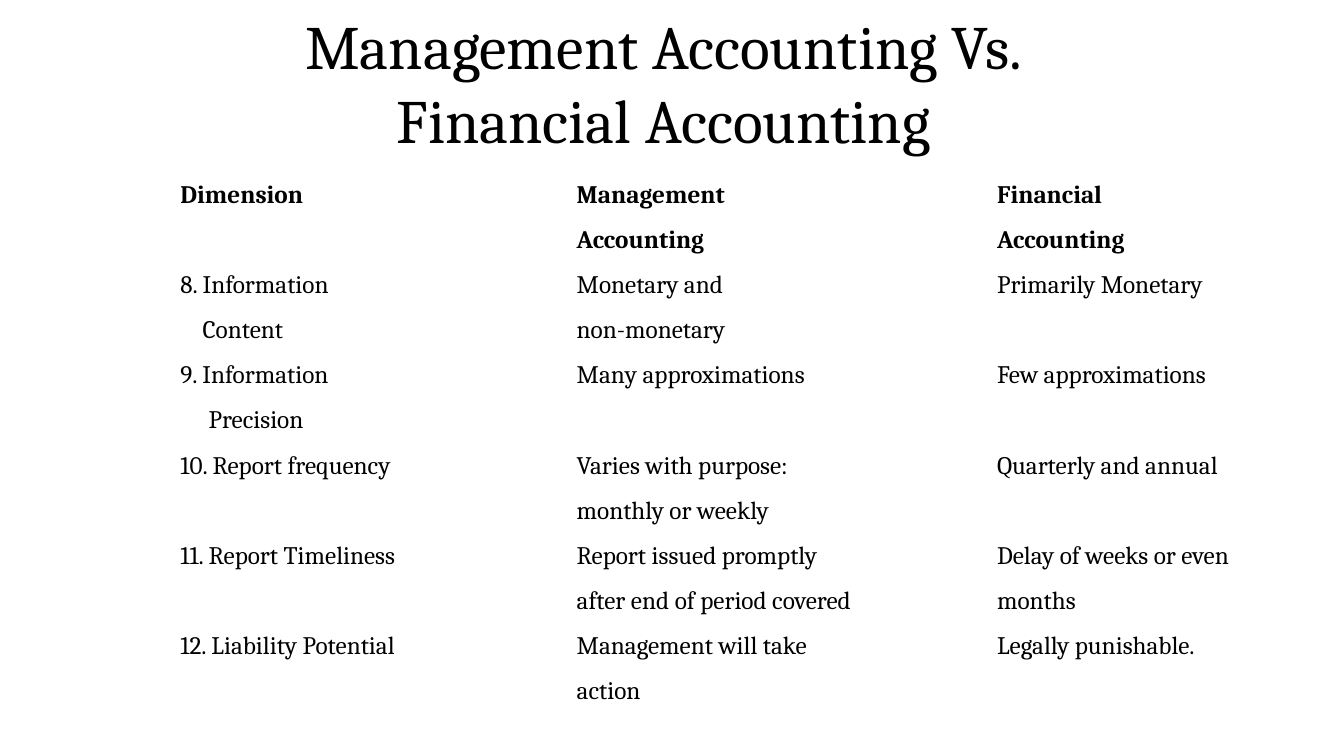
from dataclasses import dataclass

from pptx import Presentation
from pptx.dml.color import RGBColor
from pptx.enum.text import MSO_ANCHOR, MSO_AUTO_SIZE, PP_ALIGN
from pptx.util import Inches, Pt


@dataclass(frozen=True)
class Theme:
    font: str = "Cambria"
    text: RGBColor = RGBColor(0x00, 0x00, 0x00)
    title_size: Pt = Pt(44)
    title_line: Pt = Pt(52.8)
    table_size: Pt = Pt(18)


theme = Theme()


def format_font(font, size, bold=False):
    for name, value in {"name": theme.font, "size": size, "bold": bold}.items():
        setattr(font, name, value)
    font.color.rgb = theme.text


presentation = Presentation()
presentation.slide_width = Inches(13.33)
presentation.slide_height = Inches(7.5)
slide = presentation.slides.add_slide(presentation.slide_layouts[5])

# Title
title = slide.shapes.title
title_box = {"left": 2.08, "top": 0.08, "width": 9.01, "height": 1.44}
for name, value in title_box.items():
    setattr(title, name, Inches(value))
title_frame = title.text_frame
title_format = {
    "margin_left": 0, "margin_top": 0, "margin_right": 0, "margin_bottom": 0,
    "word_wrap": True, "auto_size": MSO_AUTO_SIZE.NONE,
    "vertical_anchor": MSO_ANCHOR.TOP,
}
for name, value in title_format.items():
    setattr(title_frame, name, value)
title_frame.text = "Management Accounting Vs.\nFinancial Accounting"
for paragraph in title_frame.paragraphs:
    paragraph.alignment = PP_ALIGN.CENTER
    paragraph.line_spacing = theme.title_line
    format_font(paragraph.runs[0].font, theme.title_size)

# Comparison rows: the first two are the heading
rows = [
    ("Dimension", "Management", "Financial"),
    ("", "Accounting", "Accounting"),
    ("8. Information", "Monetary and", "Primarily Monetary"),
    ("Content", "non-monetary", ""),
    ("9. Information", "Many approximations", "Few approximations"),
    ("Precision", "", ""),
    ("10. Report frequency", "Varies with purpose:", "Quarterly and annual"),
    ("", "monthly or weekly", ""),
    ("11. Report Timeliness", "Report issued promptly", "Delay of weeks or even"),
    ("", "after end of period covered", "months"),
    ("12. Liability Potential", "Management will take", "Legally punishable."),
    ("", "action", ""),
]
heading_rows = 2
column_widths = [3.57, 4.47, 3.38]
column_indents = [0.04, 0.4, 0.1]
continuation_indents = {"Content": 0.26, "Precision": 0.32}

# Table
table = slide.shapes.add_table(
    len(rows), len(column_widths),
    Inches(1.75), Inches(1.79), Inches(sum(column_widths)), Inches(5.38),
).table
table.first_row = False
table.horz_banding = False
for column, width in zip(table.columns, column_widths):
    column.width = Inches(width)

for row_index, texts in enumerate(rows):
    for column_index, text in enumerate(texts):
        cell = table.cell(row_index, column_index)
        indent = continuation_indents.get(text, column_indents[column_index])
        cell_format = {
            "margin_left": Inches(indent), "margin_top": 0,
            "margin_right": 0, "margin_bottom": 0,
            "vertical_anchor": MSO_ANCHOR.TOP, "text": text,
        }
        for name, value in cell_format.items():
            setattr(cell, name, value)
        cell.fill.background()
        for run in cell.text_frame.paragraphs[0].runs:
            format_font(run.font, theme.table_size, row_index < heading_rows)

presentation.save("out.pptx")
